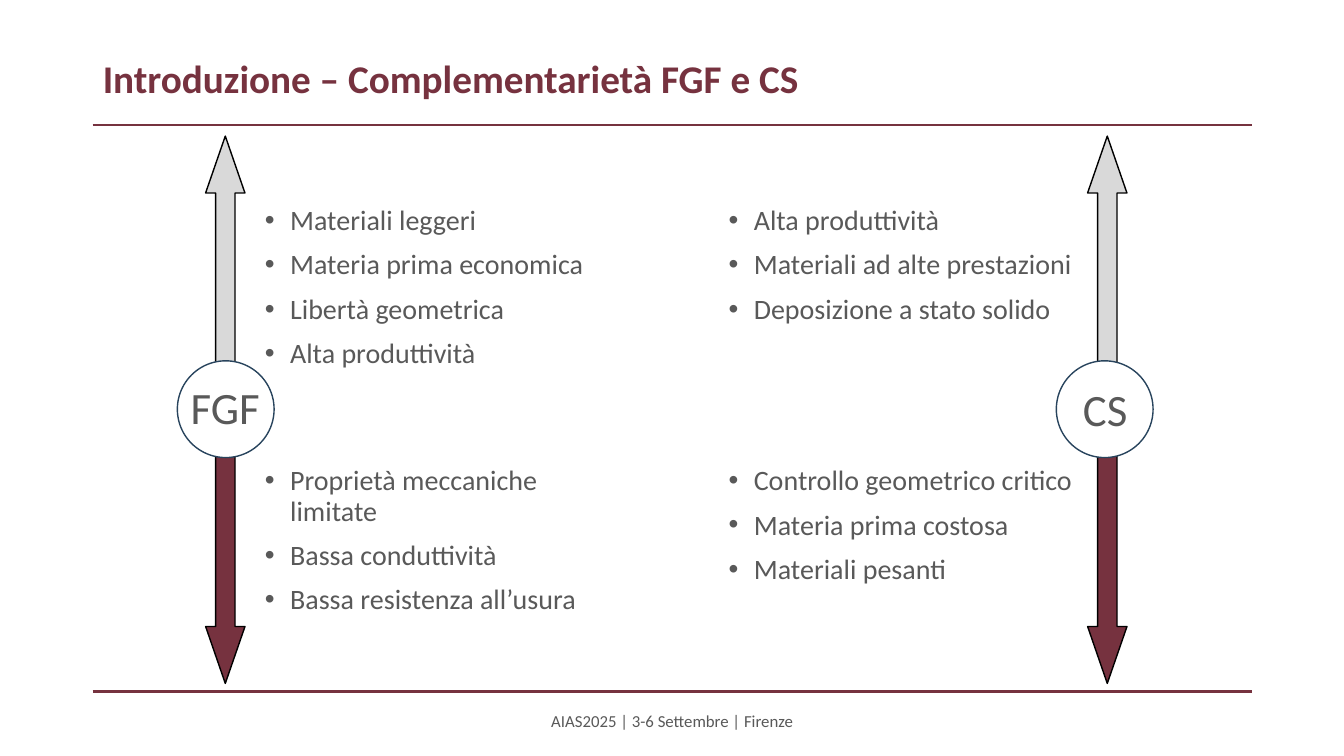
from lxml import etree
from pptx import Presentation
from pptx.dml.color import RGBColor
from pptx.enum.shapes import MSO_CONNECTOR, MSO_SHAPE
from pptx.enum.text import MSO_ANCHOR, MSO_AUTO_SIZE, PP_ALIGN
from pptx.oxml.ns import qn
from pptx.util import Pt

STRAIGHT = MSO_CONNECTOR.STRAIGHT
DOWN_ARROW, OVAL = MSO_SHAPE.DOWN_ARROW, MSO_SHAPE.OVAL
TOP, MIDDLE = MSO_ANCHOR.TOP, MSO_ANCHOR.MIDDLE
LEFT, CENTER = PP_ALIGN.LEFT, PP_ALIGN.CENTER
NO_AUTOFIT = MSO_AUTO_SIZE.NONE

FONT = "Calibri"
WINE, GREY, LIGHT = "76323F", "595959", "D9D9D9"
WHITE, BLACK, NAVY = "FFFFFF", "000000", "28445D"
TITLE_LAYOUT = 5
ADVANTAGES_TOP, DRAWBACKS_TOP = 144, 329.76

# Each process: arrow left, circle left, label left and top, list left
PROCESSES = [
    ("FGF", 146.88, 126.72, 98.64, 272.16, 182.16),
    ("CS", 776.88, 754.56, 727.2, 273.6, 513.36),
]
# Each list: advantages with their box width, drawbacks with theirs
LISTS = {
    "FGF": [
        (331.2, ["Materiali leggeri", "Materia prima economica",
                 "Libertà geometrica", "Alta produttività"]),
        (272.88, ["Proprietà meccaniche limitate", "Bassa conduttività",
                  "Bassa resistenza all’usura"]),
    ],
    "CS": [
        (272.16, ["Alta produttività", "Materiali ad alte prestazioni",
                  "Deposizione a stato solido"]),
        (272.16, ["Controllo geometrico critico", "Materia prima costosa",
                  "Materiali pesanti"]),
    ],
}


def color(hex_string):
    return RGBColor.from_string(hex_string)


def place(shape, left, top, width, height):
    shape.left, shape.top = Pt(left), Pt(top)
    shape.width, shape.height = Pt(width), Pt(height)


def add_bullet(para, indent=18):
    """Give the paragraph a hanging round bullet."""
    properties = para._p.get_or_add_pPr()
    properties.set("marL", str(Pt(indent)))
    properties.set("indent", str(-Pt(indent)))
    etree.SubElement(properties, qn("a:buFont"), typeface="Arial")
    etree.SubElement(properties, qn("a:buChar"), char="•")


def write(box, lines, size=20, fill=GREY, bold=False, align=LEFT,
          anchor=TOP, spacing=0.9, bullets=False):
    """Fill the box with one formatted paragraph per line."""
    frame = box.text_frame
    frame.word_wrap = True
    frame.auto_size = NO_AUTOFIT
    frame.vertical_anchor = anchor
    for index, line in enumerate(lines):
        para = frame.add_paragraph() if index else frame.paragraphs[0]
        para.alignment = align
        para.line_spacing = spacing
        para.space_before = Pt(10 if index else 0)
        if bullets:
            add_bullet(para)
        span = para.add_run()
        span.text = line
        span.font.name = FONT
        span.font.size = Pt(size)
        span.font.bold = bold
        span.font.color.rgb = color(fill)


def add_text(slide, lines, left, top, width, height, **text_format):
    box = slide.shapes.add_textbox(Pt(left), Pt(top), Pt(width), Pt(height))
    write(box, lines, **text_format)


def add_rule(slide, top):
    rule = slide.shapes.add_connector(
        STRAIGHT, Pt(66.24), Pt(top), Pt(894.24), Pt(top))
    rule.line.color.rgb = color(WINE)
    rule.line.width = Pt(1.5)
    etree.SubElement(rule._element.spPr, qn("a:effectLst"))


def add_figure(slide, kind, left, top, width, height, fill, outline):
    figure = slide.shapes.add_shape(
        kind, Pt(left), Pt(top), Pt(width), Pt(height))
    figure.shadow.inherit = False
    figure.fill.solid()
    figure.fill.fore_color.rgb = color(fill)
    figure.line.color.rgb = color(outline)
    figure.line.width = Pt(1)
    return figure


def add_arrow(slide, left, top, fill, rotation=0):
    arrow = add_figure(slide, DOWN_ARROW, left, top, 28.08, 192.96, fill, BLACK)
    arrow.adjustments[0] = 0.494
    arrow.adjustments[1] = 1.446
    arrow.rotation = rotation


def add_process(slide, name, arrow_left, circle_left, label_left, label_top,
                list_left):
    """Draw one process: its two arrows, its lists and its named circle."""
    add_arrow(slide, arrow_left, 295.2, WINE)
    add_arrow(slide, arrow_left, 97.2, LIGHT, rotation=180)
    for top, (width, lines) in zip((ADVANTAGES_TOP, DRAWBACKS_TOP), LISTS[name]):
        add_text(slide, lines, list_left, top, width, 182.88, bullets=True)
    add_figure(slide, OVAL, circle_left, 257.76, 69.12, 69.12, WHITE, NAVY)
    add_text(slide, [name], label_left, label_top, 124.56, 48.96,
             size=32, align=CENTER)


def main():
    deck = Presentation()
    deck.slide_width, deck.slide_height = Pt(960), Pt(540)
    slide = deck.slides.add_slide(deck.slide_layouts[TITLE_LAYOUT])

    title = slide.shapes.title
    place(title, 66.24, 28.8, 701.28, 57.6)
    write(title, ["Introduzione – Complementarietà FGF e CS"], size=28,
          fill=WINE, bold=True, anchor=MIDDLE)
    for top in (89.28, 493.92):
        add_rule(slide, top)
    for process in PROCESSES:
        add_process(slide, *process)
    add_text(slide, ["AIAS2025 | 3-6 Settembre | Firenze"],
             318.24, 500.4, 324, 28.8, size=12, align=CENTER, anchor=MIDDLE,
             spacing=1.0)
    deck.save("out.pptx")


if __name__ == "__main__":
    main()
